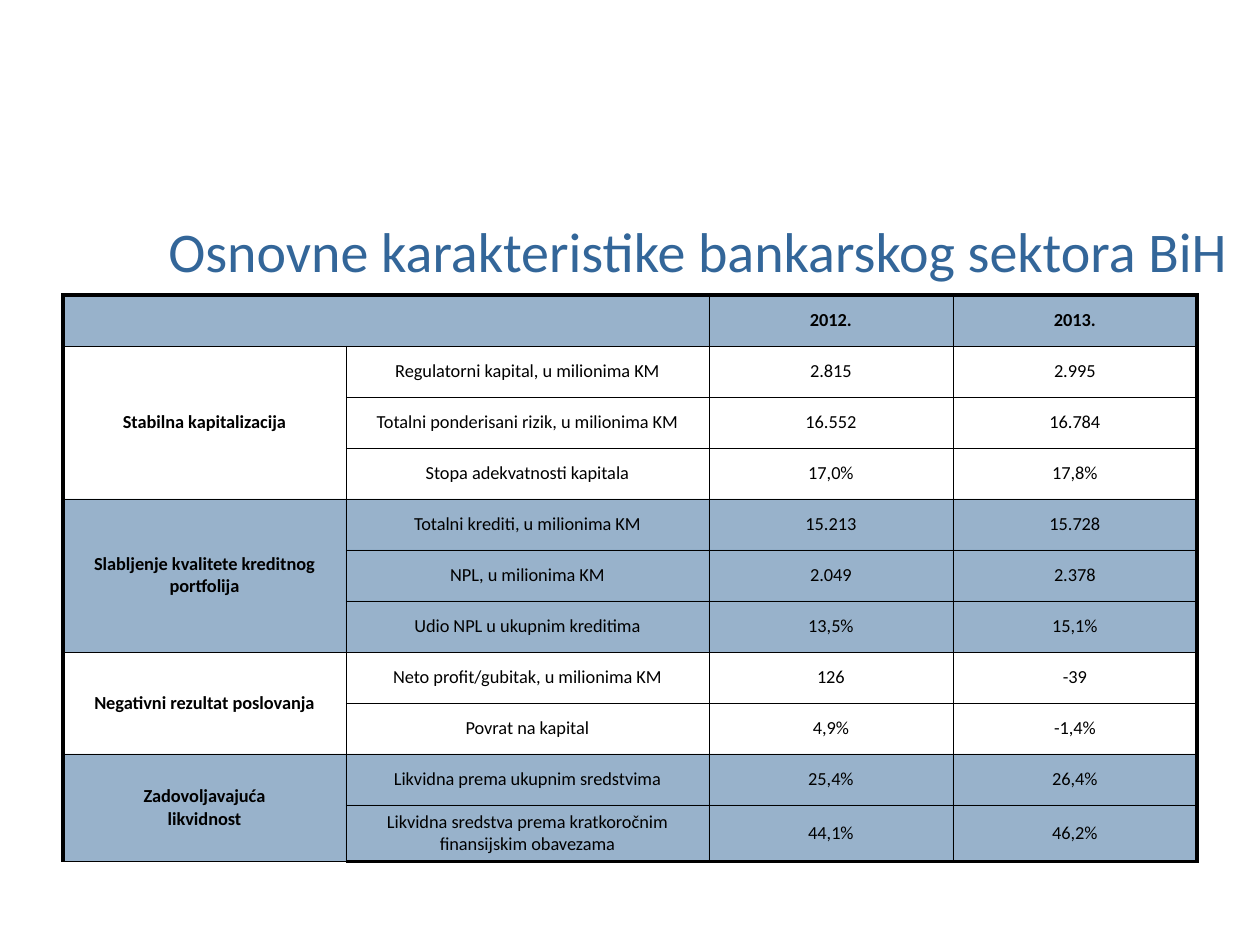
from lxml import etree
from pptx import Presentation
from pptx.dml.color import RGBColor
from pptx.enum.text import MSO_ANCHOR, PP_ALIGN
from pptx.oxml.ns import qn
from pptx.util import Emu, Pt

MIDDLE = MSO_ANCHOR.MIDDLE
CENTER, RIGHT = PP_ALIGN.CENTER, PP_ALIGN.RIGHT
BLUE = RGBColor(0x33, 0x66, 0x99)
BLACK = RGBColor(0, 0, 0)
EMU_PER_PX = 914400 / 126
THIN, THICK = Pt(0.25), Pt(2.25)

YEARS = ["2012.", "2013."]
# Group heading, then its indicators with one value per year
GROUPS = [
    ("Stabilna kapitalizacija", [
        ("Regulatorni kapital, u milionima KM", "2.815", "2.995"),
        ("Totalni ponderisani rizik, u milionima KM", "16.552", "16.784"),
        ("Stopa adekvatnosti kapitala", "17,0%", "17,8%"),
    ]),
    ("Slabljenje kvalitete kreditnog portfolija", [
        ("Totalni krediti, u milionima KM", "15.213", "15.728"),
        ("NPL, u milionima KM", "2.049", "2.378"),
        ("Udio NPL u ukupnim kreditima", "13,5%", "15,1%"),
    ]),
    ("Negativni rezultat poslovanja", [
        ("Neto profit/gubitak, u milionima KM", "126", "-39"),
        ("Povrat na kapital", "4,9%", "-1,4%"),
    ]),
    ("Zadovoljavajuća\nlikvidnost", [
        ("Likvidna prema ukupnim sredstvima", "25,4%", "26,4%"),
        ("Likvidna sredstva prema kratkoročnim finansijskim obavezama",
         "44,1%", "46,2%"),
    ]),
]
COLUMN_WIDTHS = [283, 363, 244, 244]
ROW_HEIGHT = 51


def px(length):
    return Emu(round(length * EMU_PER_PX))


class SlideBuilder:
    font = "Calibri"

    def __init__(self, slide):
        self.slide = slide

    def set_text(self, frame, text, size, color, align, bold=False):
        frame.text = text
        for paragraph in frame.paragraphs:
            paragraph.alignment = align
            for run in paragraph.runs:
                run.font.name = self.font
                run.font.size = Pt(size)
                run.font.bold = bold
                run.font.color.rgb = color

    def title(self, text, left, top, width, height):
        frame = self.slide.shapes.add_textbox(
            px(left), px(top), px(width), px(height)).text_frame
        frame.word_wrap = True
        frame.vertical_anchor = MIDDLE
        self.set_text(frame, text, 32, BLUE, RIGHT)

    def table(self, left, top, widths, row_count):
        table = self.slide.shapes.add_table(
            row_count, len(widths), px(left), px(top),
            px(sum(widths)), px(row_count * ROW_HEIGHT)).table
        for column, width in zip(table.columns, widths):
            column.width = px(width)
        for row in table.rows:
            row.height = px(ROW_HEIGHT)
        return table

    def cell(self, cell, text, bold=False):
        cell.vertical_anchor = MIDDLE
        self.set_text(cell.text_frame, text, 10.5, BLACK, CENTER, bold)

    def shade(self, cell, shaded):
        """Fill a cell with half-transparent blue, or leave it clear."""
        if not shaded:
            cell.fill.background()
            return
        cell.fill.solid()
        cell.fill.fore_color.rgb = BLUE
        color = cell._tc.tcPr.find(f".//{qn('a:srgbClr')}")
        etree.SubElement(color, qn("a:alpha"), val="50000")

    def borders(self, cell, outer_edges):
        """Draw thick lines on the outer edges and thin ones elsewhere."""
        properties = cell._tc.get_or_add_tcPr()
        for position, edge in enumerate("LRTB"):
            width = THICK if edge in outer_edges else THIN
            line = etree.Element(qn(f"a:ln{edge}"), w=str(width))
            fill = etree.SubElement(line, qn("a:solidFill"))
            etree.SubElement(fill, qn("a:srgbClr"), val=str(BLACK))
            properties.insert(position, line)


def main():
    presentation = Presentation()
    presentation.slide_width, presentation.slide_height = px(1260), px(945)
    builder = SlideBuilder(
        presentation.slides.add_slide(presentation.slide_layouts[6]))

    builder.title("Osnovne karakteristike bankarskog sektora BiH",
                  106, 205, 1134, 90)

    row_count = 1 + sum(len(indicators) for _, indicators in GROUPS)
    last_row, last_column = row_count - 1, len(COLUMN_WIDTHS) - 1
    indicator_table = builder.table(63, 295, COLUMN_WIDTHS, row_count)

    indicator_table.cell(0, 0).merge(indicator_table.cell(0, 1))
    for column, year in enumerate(YEARS, start=2):
        builder.cell(indicator_table.cell(0, column), year, bold=True)

    shaded_rows = {0}
    row = 1
    for group_index, (heading, indicators) in enumerate(GROUPS):
        heading_cell = indicator_table.cell(row, 0)
        heading_cell.merge(indicator_table.cell(row + len(indicators) - 1, 0))
        builder.cell(heading_cell, heading, bold=True)
        for indicator in indicators:
            if group_index % 2:
                shaded_rows.add(row)
            for column, text in enumerate(indicator, start=1):
                builder.cell(indicator_table.cell(row, column), text)
            row += 1

    for row in range(row_count):
        for column in range(last_column + 1):
            cell = indicator_table.cell(row, column)
            outer = {"L": column == 0, "R": column == last_column,
                     "T": row == 0, "B": row == last_row}
            builder.shade(cell, row in shaded_rows)
            builder.borders(cell, [edge for edge in outer if outer[edge]])

    presentation.save("out.pptx")


if __name__ == "__main__":
    main()
